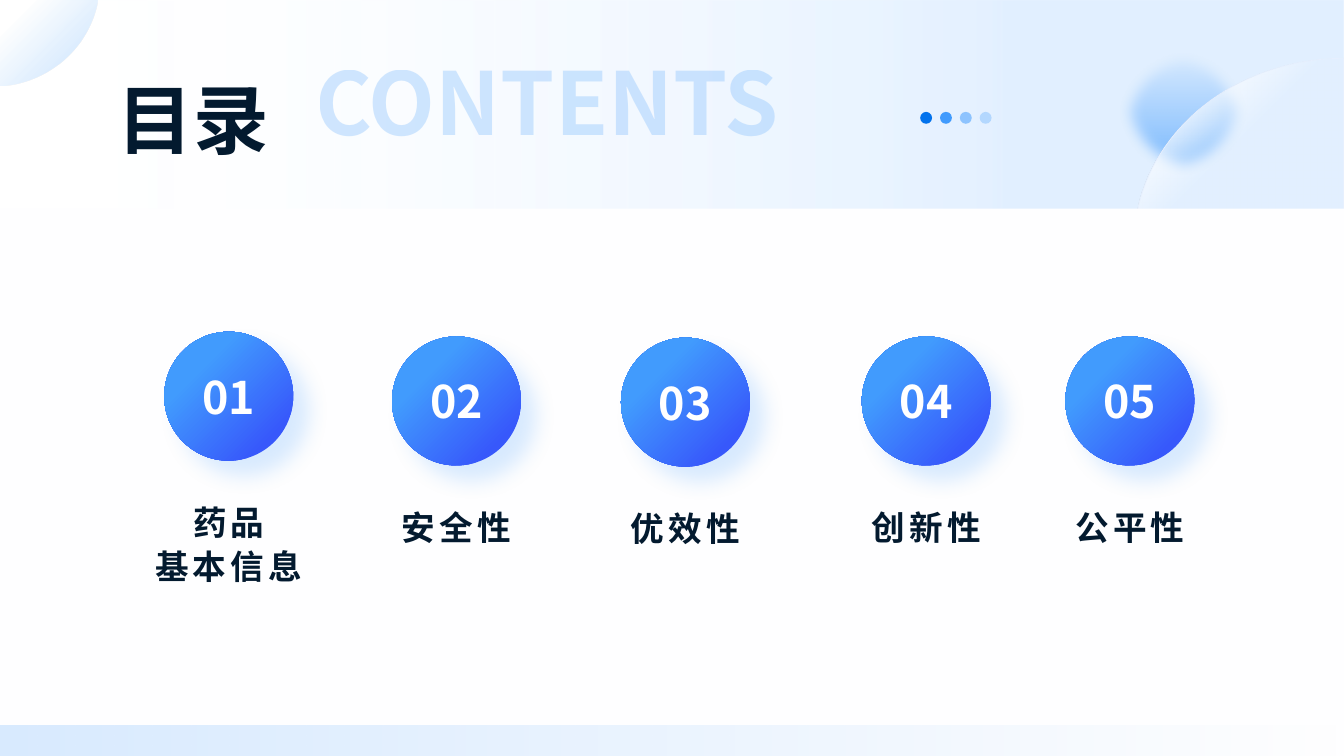
"""Build a contents slide with five numbered topics."""
from dataclasses import dataclass
from typing import Any, Optional

from lxml.etree import SubElement
from pptx import Presentation
from pptx.dml.color import RGBColor
from pptx.enum.shapes import MSO_SHAPE as Preset
from pptx.enum.text import MSO_ANCHOR as Anchor, PP_ALIGN as Align
from pptx.oxml.ns import qn
from pptx.util import Cm, Pt

COLORS = {
    "white": "FFFFFF", "panel": "FEFEFF", "footer": "D9EBFF", "edge": "E6EFFE",
    "ink": "031A2F", "deep": "0272EC", "blue": "419BFD", "sky": "8DC3FE",
    "pale": "B3D7FE", "indigo": "3758FB",
}
CJK_FONT = "Noto Sans CJK SC"
SLIDE_WIDTH, SLIDE_HEIGHT = 33.87, 19.05
PANEL_TOP, FOOTER_TOP = 5.26, 18.29
CIRCLE_SIZE = 3.25
LABEL_WIDTH, LABEL_HEIGHT, LABEL_DROP = 8.43, 2.69, 4.06
NO_INSETS = dict.fromkeys(("margin_left", "margin_top", "margin_right", "margin_bottom"), 0)
Point = tuple[float, float]


@dataclass(frozen=True)
class Gradient:
    """Stops as (position, colour, opacity) in percent, and a clockwise angle."""
    stops: tuple[tuple[int, str, int], ...]
    angle: int


@dataclass(frozen=True)
class TextStyle:
    """Look of one run of text."""
    size: int
    color: str
    latin: str = CJK_FONT
    spacing: int = 0
    opacity: int = 100


@dataclass(frozen=True)
class Topic:
    """One numbered topic with the top left corner of its circle."""
    lines: tuple[str, ...]
    left: float
    top: float


TOPICS = (
    Topic(("药品", "基本信息"), 4.14, 8.36),
    Topic(("安全性",), 9.88, 8.48),
    Topic(("优效性",), 15.65, 8.51),
    Topic(("创新性",), 21.72, 8.48),
    Topic(("公平性",), 26.85, 8.48),
)
BAND_FILL = Gradient(((0, "white", 0), (76, "blue", 15)), 0)
BLUR_FILL = Gradient(((0, "blue", 0), (100, "blue", 70)), 90)
ARC_FILL = Gradient(((50, "white", 5), (71, "white", 68)), 225)
FOOTER_FILL = Gradient(((0, "footer", 0), (100, "footer", 100)), 180)
CORNER_FILL = Gradient(((20, "blue", 0), (100, "blue", 30)), 45)
CIRCLE_FILL = Gradient(((17, "indigo", 100), (72, "blue", 100)), 225)
TITLE_STYLE = TextStyle(54, "ink", "Arial")
CONTENTS_STYLE = TextStyle(62, "sky", opacity=40)
NUMBER_STYLE = TextStyle(32, "white")
LABEL_STYLE = TextStyle(24, "ink", spacing=3)


def rgb(name: str) -> RGBColor:
    """Look up a named colour."""
    return RGBColor.from_string(COLORS[name])


def set_all(target: Any, values: dict[str, Any]) -> None:
    """Set every attribute in the dict on the target."""
    for name, value in values.items():
        setattr(target, name, value)


def add_color(parent: Any, name: str, opacity: int) -> None:
    """Append a colour element with its opacity in percent."""
    color = SubElement(parent, qn("a:srgbClr"), val=COLORS[name])
    SubElement(color, qn("a:alpha"), val=str(opacity * 1000))


def paint(shape: Any, fill: str | Gradient, line: Optional[str] = None) -> None:
    """Fill the shape, set its outline and switch off its shadow."""
    shape.shadow.inherit = False
    if line:
        shape.line.color.rgb = rgb(line)
        shape.line.width = Pt(0.5)
    else:
        shape.line.fill.background()
    if isinstance(fill, str):
        shape.fill.solid()
        shape.fill.fore_color.rgb = rgb(fill)
        return
    shape.fill.gradient()
    gradient = shape._element.spPr.find(qn("a:gradFill"))
    for child in list(gradient):
        gradient.remove(child)
    stops = SubElement(gradient, qn("a:gsLst"))
    for position, color, opacity in fill.stops:
        add_color(SubElement(stops, qn("a:gs"), pos=str(position * 1000)), color, opacity)
    SubElement(gradient, qn("a:lin"), ang=str(fill.angle * 60000), scaled="0")


def add_effect(shape: Any, tag: str, **values: int) -> Any:
    """Add an effect to a painted shape."""
    effects = shape._element.spPr.find(qn("a:effectLst"))
    return SubElement(effects, qn(tag), {name: str(value) for name, value in values.items()})


def add_preset(shapes: Any, preset: Preset, left: float, top: float, width: float,
               height: float, fill: str | Gradient) -> Any:
    """Draw a painted preset shape."""
    shape = shapes.add_shape(preset, Cm(left), Cm(top), Cm(width), Cm(height))
    paint(shape, fill)
    return shape


def curve(start: Point, first: Point, second: Point, end: Point, steps: int = 32) -> list[Point]:
    """Return points along a cubic curve."""
    points = []
    for step in range(steps + 1):
        t = step / steps
        weights = ((1 - t) ** 3, 3 * t * (1 - t) ** 2, 3 * t * t * (1 - t), t ** 3)
        corners = (start, first, second, end)
        points.append(tuple(sum(w * c[axis] for w, c in zip(weights, corners)) for axis in (0, 1)))
    return points


def add_outline(shapes: Any, points: list[Point], fill: Gradient, line: Optional[str] = None) -> None:
    """Draw a closed freeform through the points."""
    scaled = [(Cm(x), Cm(y)) for x, y in points]
    builder = shapes.build_freeform(*scaled[0])
    builder.add_line_segments(scaled[1:], close=True)
    paint(builder.convert_to_shape(), fill, line)


def write(shape: Any, lines: tuple[str, ...], style: TextStyle, frame: dict[str, Any],
          layout: dict[str, Any]) -> None:
    """Write one paragraph per line in the given style."""
    text_frame = shape.text_frame
    set_all(text_frame, frame)
    for index, line in enumerate(lines):
        paragraph = text_frame.add_paragraph() if index else text_frame.paragraphs[0]
        set_all(paragraph, layout)
        run = paragraph.add_run()
        run.text = line
        set_all(run.font, {"size": Pt(style.size), "bold": True, "name": style.latin})
        run.font.color.rgb = rgb(style.color)
        properties = run.font._element
        SubElement(properties, qn("a:ea"), typeface=CJK_FONT)
        if style.spacing:
            properties.set("spc", str(style.spacing * 100))
        if style.opacity < 100:
            color = properties.find(".//" + qn("a:srgbClr"))
            SubElement(color, qn("a:alpha"), val=str(style.opacity * 1000))


def add_backdrop(shapes: Any) -> None:
    """Draw the header band, panel, footer and ornaments."""
    add_preset(shapes, Preset.RECTANGLE, 0, 0, SLIDE_WIDTH, SLIDE_HEIGHT, BAND_FILL)
    blur = add_preset(shapes, Preset.OVAL, 28.12, 1.09, 3.4, 3.4, BLUR_FILL)
    add_effect(blur, "a:softEdge", rad=Pt(10))
    arc = curve((28.7, 5.16), (29.21, 3.05), (31.32, 1.47), (SLIDE_WIDTH, 1.47))
    add_outline(shapes, [(SLIDE_WIDTH, 5.49), (28.65, 5.49), *arc], ARC_FILL, "edge")
    add_preset(shapes, Preset.RECTANGLE, 0, PANEL_TOP, SLIDE_WIDTH, SLIDE_HEIGHT - PANEL_TOP, "panel")
    add_preset(shapes, Preset.RECTANGLE, 0, FOOTER_TOP, SLIDE_WIDTH, SLIDE_HEIGHT - FOOTER_TOP, FOOTER_FILL)
    corner = curve((2.46, 0.08), (2.24, 1.19), (1.3, 2.03), (0.15, 2.16))
    add_outline(shapes, [(0, 0), (2.46, 0), *corner, (0, 2.16)], CORNER_FILL)
    for index, color in enumerate(("deep", "blue", "sky", "pale")):
        add_preset(shapes, Preset.OVAL, 23.19 + index * 0.5, 2.82, 0.3, 0.3, color)


def add_topic(shapes: Any, number: int, topic: Topic) -> None:
    """Draw a numbered circle grouped with its label."""
    members = shapes.add_group_shape().shapes
    circle = add_preset(members, Preset.OVAL, topic.left, topic.top, CIRCLE_SIZE, CIRCLE_SIZE, CIRCLE_FILL)
    shadow = add_effect(circle, "a:outerShdw", blurRad=Pt(15), dist=Pt(15), dir=45 * 60000)
    add_color(shadow, "blue", 20)
    write(circle, (f"{number:02}",), NUMBER_STYLE,
          {"word_wrap": False, "vertical_anchor": Anchor.MIDDLE}, {"alignment": Align.CENTER})
    label_left = topic.left + (CIRCLE_SIZE - LABEL_WIDTH) / 2
    label = members.add_textbox(Cm(label_left), Cm(topic.top + LABEL_DROP), Cm(LABEL_WIDTH), Cm(LABEL_HEIGHT))
    write(label, topic.lines, LABEL_STYLE, {"word_wrap": True},
          {"alignment": Align.CENTER, "line_spacing": 1.1})


def main() -> None:
    """Build and save the presentation."""
    presentation = Presentation()
    set_all(presentation, {"slide_width": Cm(SLIDE_WIDTH), "slide_height": Cm(SLIDE_HEIGHT)})
    slide = presentation.slides.add_slide(presentation.slide_layouts[5])
    shapes = slide.shapes
    add_backdrop(shapes)
    title = shapes.title
    shapes._spTree.append(title._element)
    set_all(title, {"left": Cm(2.97), "top": Cm(1.47), "width": Cm(4.88), "height": Cm(3)})
    write(title, ("目录",), TITLE_STYLE, {**NO_INSETS, "vertical_anchor": Anchor.MIDDLE},
          {"alignment": Align.LEFT})
    contents = shapes.add_textbox(Cm(7.95), Cm(1.24), Cm(12.5), Cm(3.17))
    write(contents, ("CONTENTS",), CONTENTS_STYLE, {**NO_INSETS, "word_wrap": False},
          {"alignment": Align.LEFT})
    for number, topic in enumerate(TOPICS, 1):
        add_topic(shapes, number, topic)
    presentation.save("out.pptx")


if __name__ == "__main__":
    main()
